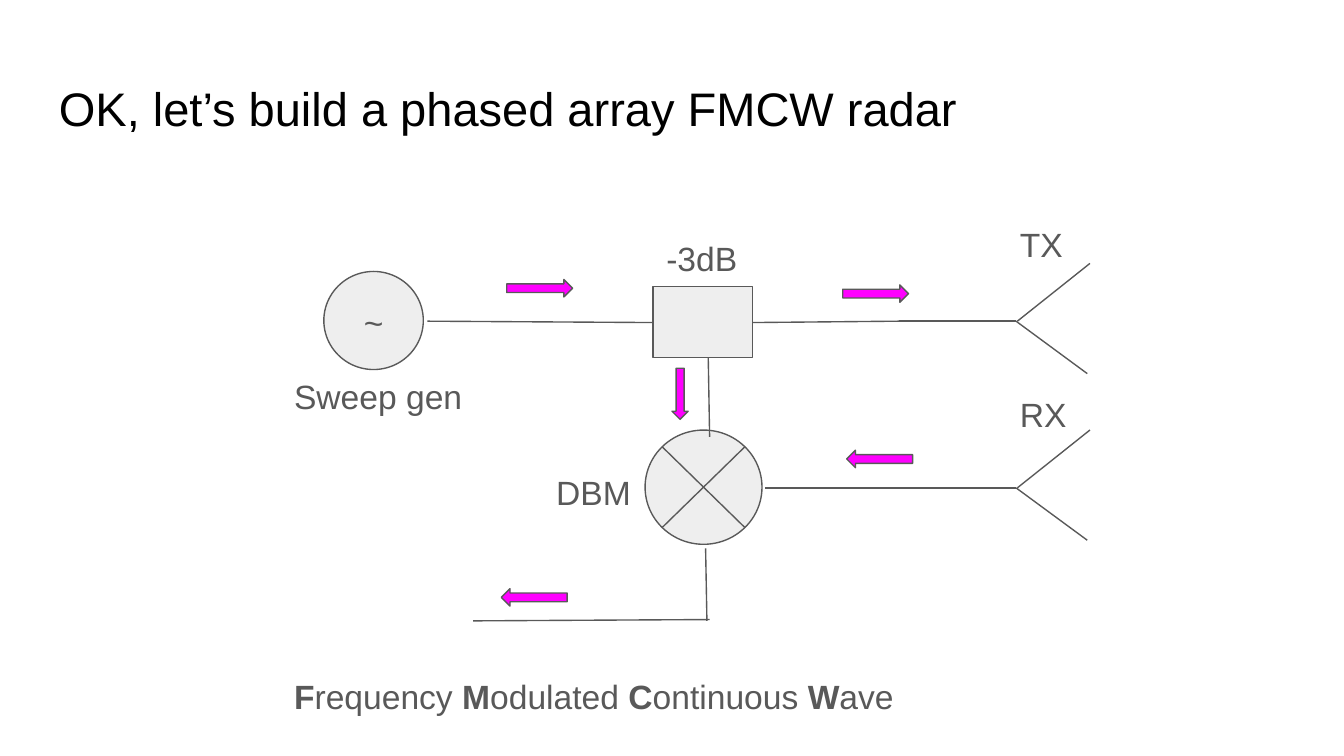
from dataclasses import dataclass

from lxml.etree import SubElement
from pptx import Presentation
from pptx.dml.color import RGBColor
from pptx.enum.shapes import MSO_CONNECTOR, MSO_SHAPE
from pptx.enum.text import MSO_ANCHOR
from pptx.oxml.ns import qn
from pptx.util import Inches, Pt

FONT = "Arial"
BLACK = "000000"
GRAY = "595959"
PALE = "EEEEEE"
MAGENTA = "FF00FF"
LINE_WIDTH = 0.75
TX_LEVEL = 2.39
RX_LEVEL = 3.63


@dataclass(frozen=True)
class Block:
    kind: MSO_SHAPE
    left: float
    top: float
    width: float
    height: float
    fill: str = PALE
    rotation: float = 0


@dataclass(frozen=True)
class Wire:
    x1: float
    y1: float
    x2: float
    y2: float


@dataclass(frozen=True)
class Label:
    text: str
    left: float
    top: float
    width: float


def color(value: str) -> RGBColor:
    return RGBColor.from_string(value)


def draw_block(page, block: Block) -> None:
    shape = page.shapes.add_shape(
        block.kind, Inches(block.left), Inches(block.top),
        Inches(block.width), Inches(block.height))
    shape.shadow.inherit = False
    shape.rotation = block.rotation
    shape.fill.solid()
    shape.fill.fore_color.rgb = color(block.fill)
    shape.line.color.rgb = color(GRAY)
    shape.line.width = Pt(LINE_WIDTH)


def draw_wire(page, wire: Wire) -> None:
    connector = page.shapes.add_connector(
        MSO_CONNECTOR.STRAIGHT, Inches(wire.x1), Inches(wire.y1),
        Inches(wire.x2), Inches(wire.y2))
    connector.line.color.rgb = color(GRAY)
    connector.line.width = Pt(LINE_WIDTH)
    SubElement(connector._element.spPr, qn("a:effectLst"))


def add_span(para, text: str, *, size: float = 18, fill: str = GRAY,
             bold: bool = False) -> None:
    span = para.add_run()
    span.text = text
    span.font.name = FONT
    span.font.size = Pt(size)
    span.font.bold = bold
    span.font.color.rgb = color(fill)


def add_box(page, left: float, top: float, width: float, height: float = 0.5):
    box = page.shapes.add_textbox(
        Inches(left), Inches(top), Inches(width), Inches(height))
    frame = box.text_frame
    frame.word_wrap = True
    frame.vertical_anchor = MSO_ANCHOR.TOP
    frame.margin_left = frame.margin_right = Inches(0.1)
    frame.margin_top = frame.margin_bottom = Inches(0.1)
    return frame.paragraphs[0]


def draw_label(page, label: Label) -> None:
    para = add_box(page, label.left, label.top, label.width)
    add_span(para, label.text)


def antenna(level: float) -> list[Wire]:
    return [
        Wire(6.69, level, 7.56, level),
        Wire(7.57, level, 8.11, level - 0.43),
        Wire(7.56, level, 8.09, level + 0.39),
    ]


def signal(left: float, top: float, width: float = 0.49,
           height: float = 0.13, rotation: float = 0) -> Block:
    return Block(MSO_SHAPE.RIGHT_ARROW, left, top, width, height, MAGENTA, rotation)


COMPONENTS = [
    Block(MSO_SHAPE.FLOWCHART_SUMMING_JUNCTION, 4.8, 3.2, 0.87, 0.85),
    Block(MSO_SHAPE.OVAL, 2.41, 2.02, 0.74, 0.73),
    Block(MSO_SHAPE.FLOWCHART_PROCESS, 4.86, 2.13, 0.74, 0.53),
]
WIRES = [
    *antenna(TX_LEVEL),
    *antenna(RX_LEVEL),
    Wire(3.18, TX_LEVEL, 4.86, 2.4),
    Wire(5.6, 2.4, 6.69, TX_LEVEL),
    Wire(6.7, RX_LEVEL, 5.69, RX_LEVEL),
    Wire(5.27, 2.66, 5.28, 3.25),
    Wire(5.25, 4.08, 5.26, 4.62),
    Wire(5.28, 4.61, 3.52, 4.62),
]
LABELS = [
    Label("~", 2.61, 2.15, 0.36),
    Label("Sweep gen", 2.09, 2.7, 3.84),
    Label("-3dB", 4.86, 1.67, 3.84),
    Label("DBM", 4.04, 3.41, 3.84),
    Label("TX", 7.49, 1.57, 2.13),
    Label("RX", 7.49, 2.83, 2.13),
]
SIGNALS = [
    signal(6.27, 2.12),
    signal(6.3, 3.35, rotation=180),
    signal(4.87, 2.87, 0.38, 0.12, rotation=90),
    signal(3.77, 2.08),
    signal(3.73, 4.38, rotation=180),
]


def main() -> None:
    deck = Presentation()
    deck.slide_width = Inches(10)
    deck.slide_height = Inches(10 * 9 / 16)
    page = deck.slides.add_slide(deck.slide_layouts[6])

    title = add_box(page, 0.34, 0.49, 9.32, 0.63)
    add_span(title, "OK, let’s build a phased array FMCW radar",
             size=25.2, fill=BLACK)

    for component in COMPONENTS:
        draw_block(page, component)
    for wire in WIRES:
        draw_wire(page, wire)
    for label in LABELS:
        draw_label(page, label)
    for arrow in SIGNALS:
        draw_block(page, arrow)

    meaning = add_box(page, 2.09, 4.93, 4.8)
    for word in ("Frequency ", "Modulated ", "Continuous ", "Wave"):
        add_span(meaning, word[0], bold=True)
        add_span(meaning, word[1:])

    deck.save("out.pptx")


if __name__ == "__main__":
    main()
